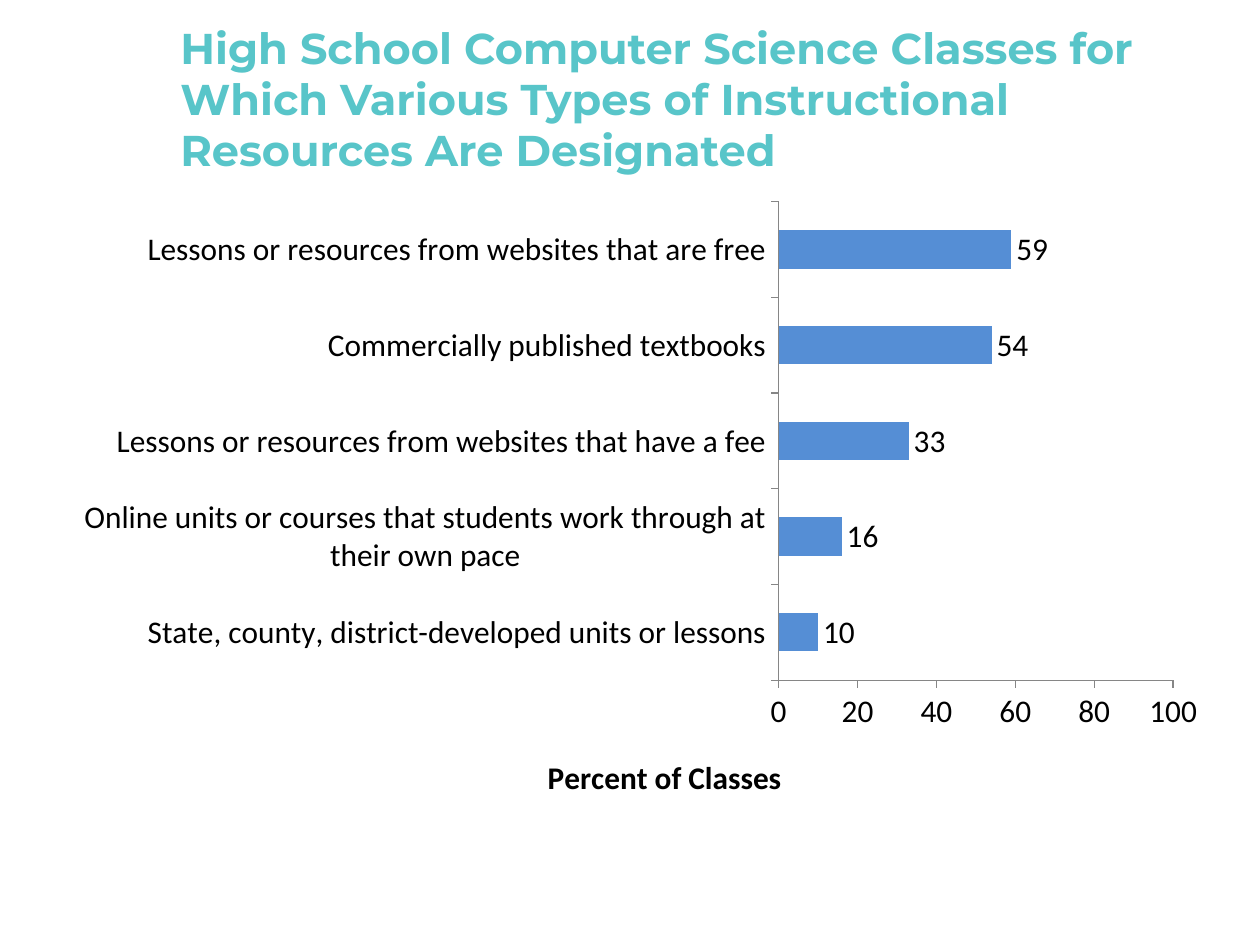
from lxml import etree
from pptx import Presentation
from pptx.chart.data import CategoryChartData
from pptx.dml.color import RGBColor
from pptx.enum.chart import XL_CHART_TYPE as ChartType
from pptx.enum.chart import XL_LABEL_POSITION as LabelPosition
from pptx.enum.chart import XL_TICK_MARK as TickMark
from pptx.enum.text import MSO_ANCHOR, MSO_AUTO_SIZE, PP_ALIGN
from pptx.oxml.ns import qn
from pptx.util import Cm, Pt

TEAL = RGBColor(0x58, 0xC5, 0xC9)
BLUE = RGBColor(0x55, 0x8E, 0xD5)
GREY = RGBColor(0x86, 0x86, 0x86)
BLACK = RGBColor(0, 0, 0)

HEADING = ("High School Computer Science Classes for Which Various Types "
           "of Instructional Resources Are Designated")
AXIS_CAPTION = "Percent of Classes"
RESOURCES = [  # from the bottom bar to the top one
    ("State, county, district-developed units or lessons", 10),
    ("Online units or courses that students work through at their own pace", 16),
    ("Lessons or resources from websites that have a fee", 33),
    ("Commercially published textbooks", 54),
    ("Lessons or resources from websites that are free", 59),
]


def set_layout(parent, index, **values):
    """Place a chart part by hand, in fractions of the chart's size."""
    for old in parent.findall(qn("c:layout")):
        parent.remove(old)
    layout = etree.Element(qn("c:layout"))
    manual = etree.SubElement(layout, qn("c:manualLayout"))
    for tag, value in values.items():
        etree.SubElement(manual, qn(f"c:{tag}")).set("val", str(value))
    parent.insert(index, layout)


def add_heading(slide):
    title = slide.shapes.title
    title.left, title.top, title.width, title.height = (
        Cm(3.38), Cm(0.43), Cm(20.75), Cm(3.18))
    frame = title.text_frame
    frame.text = HEADING
    frame.word_wrap = True
    frame.auto_size = MSO_AUTO_SIZE.NONE
    frame.vertical_anchor = MSO_ANCHOR.MIDDLE
    paragraph = frame.paragraphs[0]
    paragraph.alignment = PP_ALIGN.LEFT
    paragraph.line_spacing = 0.98
    font = paragraph.font
    font.name, font.size, font.bold = "Montserrat", Pt(24.6), True
    font.color.rgb = TEAL


def add_resource_chart(slide):
    data = CategoryChartData()
    data.categories = [resource for resource, _ in RESOURCES]
    data.add_series("Series 1", [percent for _, percent in RESOURCES])
    chart = slide.shapes.add_chart(
        ChartType.BAR_CLUSTERED, Cm(1.7), Cm(3.81), Cm(22.86), Cm(12.7), data).chart
    chart.has_legend = False
    chart.has_title = False
    chart.font.name, chart.font.size = "Calibri", Pt(18)
    chart.font.color.rgb = BLACK

    bars = chart.plots[0]
    bars.gap_width = 150
    bars.vary_by_categories = False
    fill = bars.series[0].format.fill
    fill.solid()
    fill.fore_color.rgb = BLUE
    bars.has_data_labels = True
    bars.data_labels.show_value = True
    bars.data_labels.position = LabelPosition.OUTSIDE_END

    percent_axis = chart.value_axis
    for axis in (chart.category_axis, percent_axis):
        axis.has_major_gridlines = False
        axis.major_tick_mark = TickMark.OUTSIDE
        axis.minor_tick_mark = TickMark.NONE
        axis.tick_labels.font.size = Pt(18)
        axis.format.line.color.rgb = GREY
        axis.format.line.width = Pt(0.75)
    percent_axis.minimum_scale = 0
    percent_axis.maximum_scale = 100
    percent_axis.major_unit = 20

    caption = percent_axis.axis_title.text_frame
    caption.text = AXIS_CAPTION
    font = caption.paragraphs[0].font
    font.name, font.size, font.bold = "Calibri", Pt(18), True
    font.color.rgb = BLACK

    plot_area = chart.element.find(".//" + qn("c:plotArea"))
    set_layout(plot_area, 0, layoutTarget="inner", xMode="edge", yMode="edge",
               x=0.61, y=0.02, w=0.35, h=0.76)
    set_layout(plot_area.find(".//" + qn("c:title")), 1,
               xMode="edge", yMode="edge", x=0.4, y=0.89)


def main():
    deck = Presentation()
    deck.slide_width, deck.slide_height = Cm(25.4), Cm(19.05)
    slide = deck.slides.add_slide(deck.slide_layouts[5])
    add_heading(slide)
    add_resource_chart(slide)
    deck.save("out.pptx")


if __name__ == "__main__":
    main()
